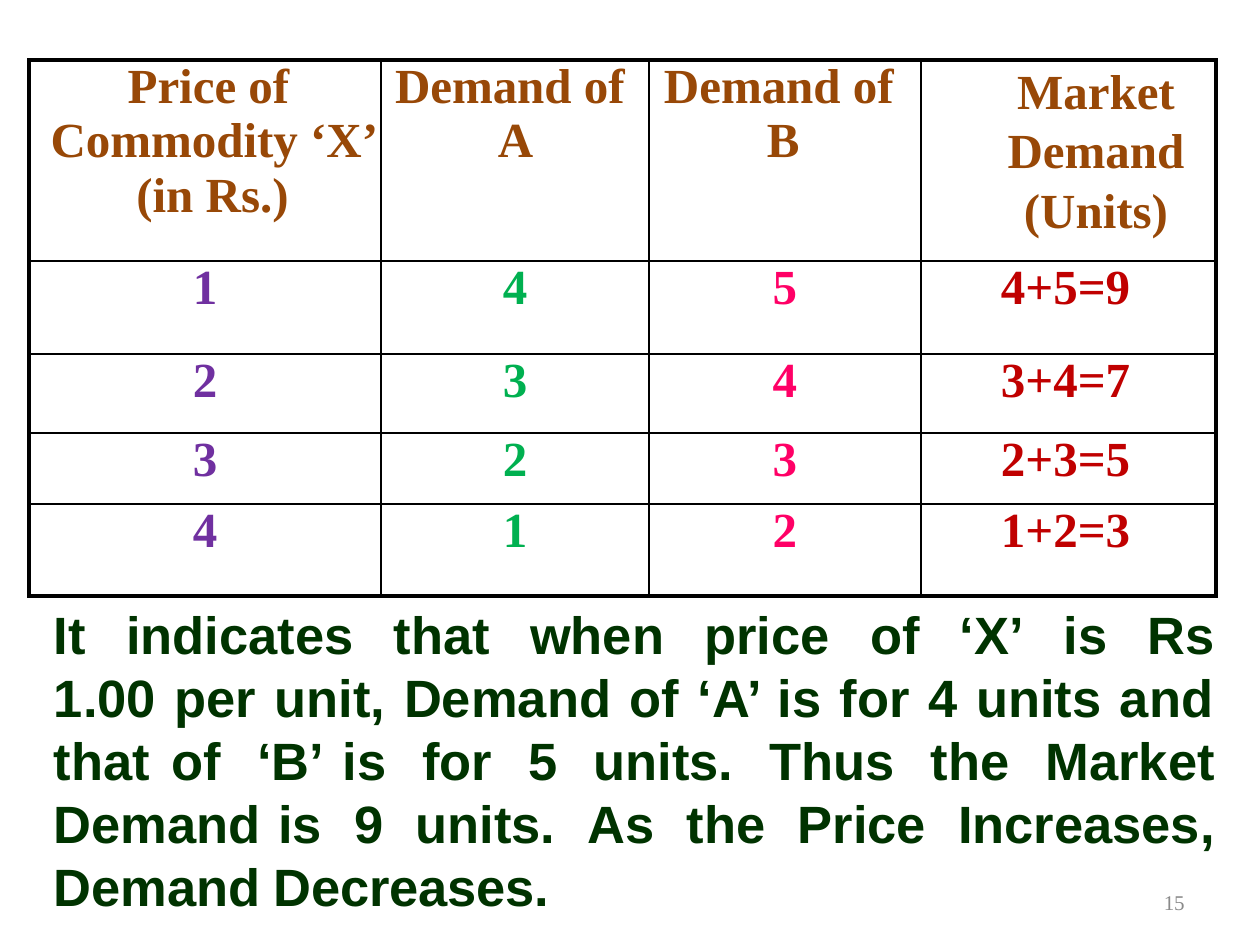
"""Build a slide with a market demand table and its reading."""
from lxml.etree import fromstring
from pptx import Presentation
from pptx.dml.color import RGBColor
from pptx.enum.text import MSO_AUTO_SIZE, PP_ALIGN
from pptx.util import Pt

HEADS = [
    ("Price of Commodity ‘X’ (in Rs.)", dict(align="CENTER", left=15, hang=-8)),
    ("Demand of A", dict(left=117, hang=-103)),
    ("Demand of B", dict(left=118, hang=-103)),
    ("Market Demand (Units)", dict(align="CENTER", left=55, lead=1.1)),
]
ROWS = [
    ("1", "4", "5", "4+5=9"),
    ("2", "3", "4", "3+4=7"),
    ("3", "2", "3", "2+3=5"),
    ("4", "1", "2", "1+2=3"),
]
WIDE = "_"
NOTE = (
    "It_indicates_that_when_price_of_‘X’_is_Rs_1.00 per unit, "
    "Demand of ‘A’ is for 4 units and that of_‘B’ is_for_5_units._"
    "Thus_the_Market_Demand is_9_units._As_the_Price_Increases,_Demand"
)
CLOSE = "Decreases."
PAGE = "15"

THEME = dict(
    serif="Times New Roman", sans="Arial",
    head="984807", cols=["7030A0", "00B050", "FF0066", "C00000"],
    note="003300", page="8A8A8A", line="000000",
    cell=28, body=30, small=12, thin=1, thick=2.25, gap=8.3,
)
WIDTHS = [352, 268, 272, 295]
HEIGHTS = [201, 93, 79, 71, 92]
GRID = (29, 60)
NS = "http://schemas.openxmlformats.org/drawingml/2006/main"


def px(n):
    return round(n * 914400 / 126)


def put(frame, text, font, size, color, bold=True, align="LEFT",
        left=0, hang=0, lead=None, track=0):
    par = frame.paragraphs[0]
    par.alignment = getattr(PP_ALIGN, align)
    if lead:
        par.line_spacing = lead
    props = par._p.get_or_add_pPr()
    props.set("marL", str(px(left)))
    props.set("indent", str(px(hang)))
    parts = [(text.split(WIDE)[0], track)]
    for part in text.split(WIDE)[1:]:
        parts += [(" ", THEME["gap"]), (part, track)]
    for part, space in parts:
        run = par.add_run()
        run.text = part
        run.font.name, run.font.size, run.font.bold = font, Pt(size), bold
        run.font.color.rgb = RGBColor.from_string(color)
        if space:
            run._r.get_or_add_rPr().set("spc", str(round(space * 100)))


def box(slide, place, text, **form):
    frame = slide.shapes.add_textbox(*map(px, place)).text_frame
    frame.margin_left = frame.margin_right = 0
    frame.margin_top = frame.margin_bottom = 0
    frame.word_wrap = True
    frame.auto_size = MSO_AUTO_SIZE.SHAPE_TO_FIT_TEXT
    put(frame, text, **form)


def edge(cell, outer):
    props = cell._tc.get_or_add_tcPr()
    for spot, side in enumerate("LRTB"):
        width = Pt(THEME["thick" if side in outer else "thin"])
        props.insert(spot, fromstring(
            f'<a:ln{side} xmlns:a="{NS}" w="{width}"><a:solidFill>'
            f'<a:srgbClr val="{THEME["line"]}"/></a:solidFill></a:ln{side}>'))


def grid(slide):
    tall, wide = len(HEIGHTS), len(WIDTHS)
    size = sum(WIDTHS), sum(HEIGHTS)
    table = slide.shapes.add_table(tall, wide, *map(px, GRID + size)).table
    table.first_row = table.horz_banding = False
    for col, width in zip(table.columns, WIDTHS):
        col.width = px(width)
    for row, height in zip(table.rows, HEIGHTS):
        row.height = px(height)
    body = [[(text, dict(left=80) if c == wide - 1 else dict(align="CENTER"))
             for c, text in enumerate(row)] for row in ROWS]
    for r, row in enumerate([HEADS] + body):
        for c, (text, form) in enumerate(row):
            cell = table.cell(r, c)
            cell.fill.background()
            cell.margin_left = cell.margin_right = 0
            cell.margin_top = cell.margin_bottom = 0
            color = THEME["cols"][c] if r else THEME["head"]
            put(cell.text_frame, text, THEME["serif"], THEME["cell"], color, **form)
            ends = dict(L=c == 0, R=c == wide - 1, T=r == 0, B=r == tall - 1)
            edge(cell, [side for side, on in ends.items() if on])


def main():
    deck = Presentation()
    deck.slide_width, deck.slide_height = px(1260), px(945)
    slide = deck.slides.add_slide(deck.slide_layouts[6])
    body = dict(font=THEME["sans"], size=THEME["body"], color=THEME["note"], left=1)
    box(slide, (1163, 890, 24, 24), PAGE, font=THEME["serif"],
        size=THEME["small"], color=THEME["page"], bold=False, left=1, track=-0.1)
    box(slide, (53, 602, 1162, 244), NOTE, align="JUSTIFY", **body)
    box(slide, (273, 854, 281, 55), CLOSE, track=-0.1, **body)
    grid(slide)
    deck.save("out.pptx")


if __name__ == "__main__":
    main()
